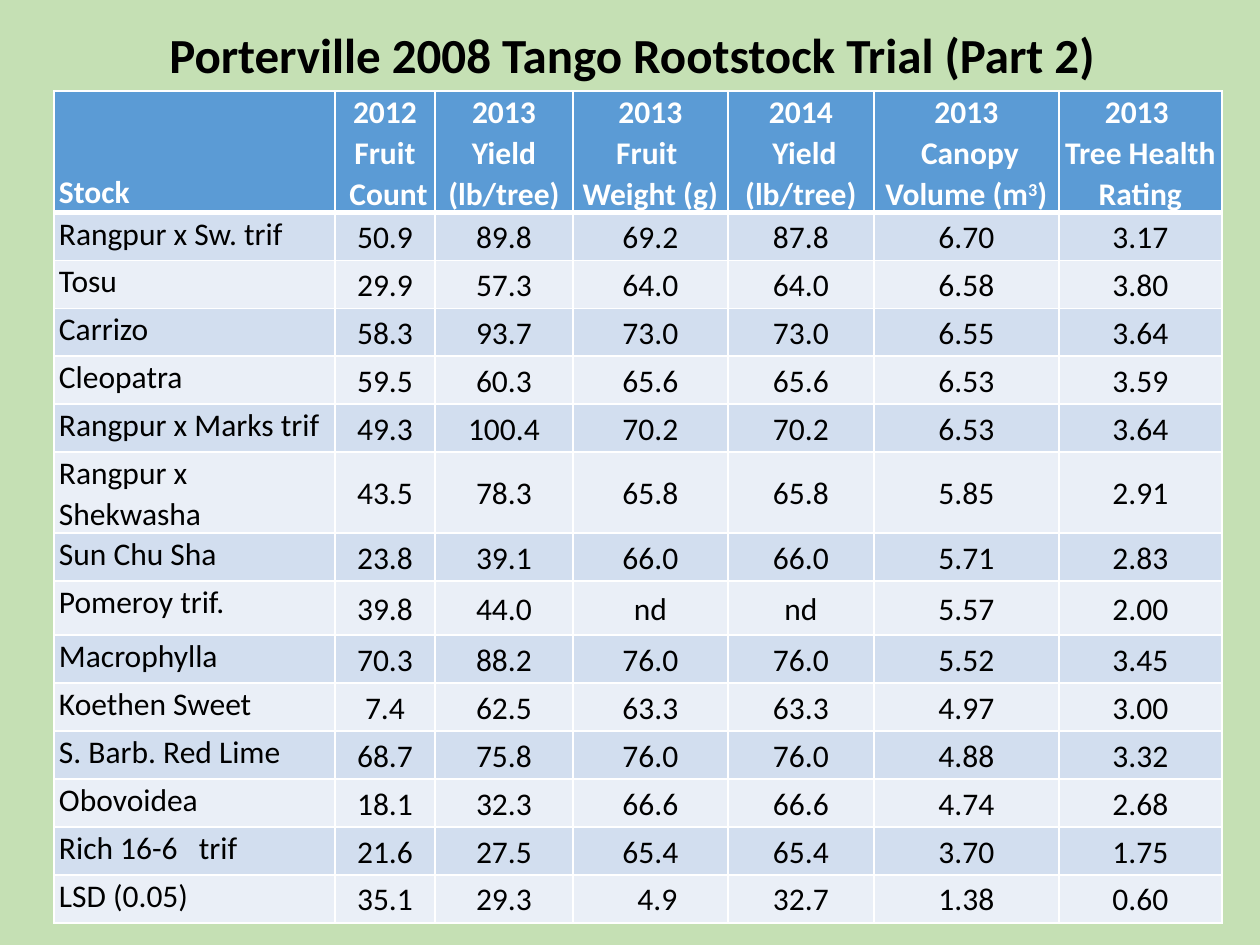
from lxml import etree
from pptx import Presentation
from pptx import util as u
from pptx.dml.color import RGBColor
from pptx.enum import text
from pptx.oxml.ns import qn

PX = u.Inches(1) / 126
FONT = "Calibri"
COLORS = {
    "page": "C5E0B4", "ink": "000000", "white": "FFFFFF",
    "header": "5B9BD5", "odd_row": "D2DEEF", "even_row": "EAEFF7",
}
COLUMN_WIDTHS = [281, 100, 138, 155, 146, 185, 163]
HEADER_HEIGHT, ROW_HEIGHT = 120, 48
TALL_ROWS = {"Rangpur x Shekwasha": 79, "Pomeroy trif.": 54}
UNPADDED_COLUMNS = (3, 4)
SPACED_HEADERS = (0, 6)

# \n starts a paragraph, \v breaks a line, ^ surrounds a superscript
HEADERS = [
    "Stock",
    "2012\nFruit\n Count",
    "2013\v Yield \n(lb/tree)",
    "2013\nFruit \vWeight (g)",
    "2014\v Yield (lb/tree)",
    "2013\v Canopy Volume (m^3^)",
    "2013 \vTree Health Rating",
]
STOCKS = [
    ("Rangpur x Sw. trif", "50.9", "89.8", "69.2", "87.8", "6.70", "3.17"),
    ("Tosu", "29.9", "57.3", "64.0", "64.0", "6.58", "3.80"),
    ("Carrizo", "58.3", "93.7", "73.0", "73.0", "6.55", "3.64"),
    ("Cleopatra", "59.5", "60.3", "65.6", "65.6", "6.53", "3.59"),
    ("Rangpur x Marks trif", "49.3", "100.4", "70.2", "70.2", "6.53", "3.64"),
    ("Rangpur x Shekwasha", "43.5", "78.3", "65.8", "65.8", "5.85", "2.91"),
    ("Sun Chu Sha", "23.8", "39.1", "66.0", "66.0", "5.71", "2.83"),
    ("Pomeroy trif.", "39.8", "44.0", "nd", "nd", "5.57", "2.00"),
    ("Macrophylla", "70.3", "88.2", "76.0", "76.0", "5.52", "3.45"),
    ("Koethen Sweet", "7.4", "62.5", "63.3", "63.3", "4.97", "3.00"),
    ("S. Barb. Red Lime", "68.7", "75.8", "76.0", "76.0", "4.88", "3.32"),
    ("Obovoidea", "18.1", "32.3", "66.6", "66.6", "4.74", "2.68"),
    ("Rich 16-6   trif", "21.6", "27.5", "65.4", "65.4", "3.70", "1.75"),
    ("LSD (0.05)", "35.1", "29.3", "4.9", "32.7", "1.38", "0.60"),
]


def px(length):
    return u.Emu(round(length * PX))


def rgb(name):
    return RGBColor.from_string(COLORS[name])


def write_paragraph(para, line, size, color, bold, centered, leading, gap=0):
    """Fill a paragraph; every second piece between ^ marks is superscript."""
    first, *rest = line.split("^")
    para.text = first
    for index, piece in enumerate(rest):
        span = para.add_run()
        span.text = piece
        if index % 2 == 0:
            span._r.get_or_add_rPr().set("baseline", "30000")
    para.alignment = text.PP_ALIGN.CENTER if centered else text.PP_ALIGN.LEFT
    para.line_spacing = leading
    para.space_before = para.space_after = u.Pt(gap)
    para.font.name, para.font.size, para.font.bold = FONT, u.Pt(size), bold
    para.font.color.rgb = rgb(color)


def add_title(page, title):
    box = page.shapes.add_textbox(px(89), px(23), px(1086), px(69))
    frame = box.text_frame
    frame.word_wrap = True
    frame.vertical_anchor = text.MSO_ANCHOR.MIDDLE
    write_paragraph(frame.paragraphs[0], title, 28, "ink", True, True, 0.9)


def set_borders(cell, **points):
    """Draw white borders; the keys are L, R, T and B."""
    properties = cell._tc.get_or_add_tcPr()
    for side, width in points.items():
        line = etree.SubElement(properties, qn(f"a:ln{side}"), w=str(u.Pt(width)))
        fill = etree.SubElement(line, qn("a:solidFill"))
        etree.SubElement(fill, qn("a:srgbClr"), val=COLORS["white"])


def fill_cell(cell, content, row, column):
    is_header = row == 0
    set_borders(cell, L=1, R=1, T=3 if row == 1 else 1, B=3 if is_header else 1)
    cell.fill.solid()
    cell.fill.fore_color.rgb = rgb(
        "header" if is_header else "odd_row" if row % 2 else "even_row")
    cell.margin_top = cell.margin_bottom = 0
    cell.margin_left = cell.margin_right = px(0 if column in UNPADDED_COLUMNS else 5)
    if is_header:
        cell.vertical_anchor = text.MSO_ANCHOR.BOTTOM
    else:
        cell.vertical_anchor = text.MSO_ANCHOR.MIDDLE if column else text.MSO_ANCHOR.TOP
    gap = 0 if is_header and column not in SPACED_HEADERS else 3
    frame = cell.text_frame
    for index, line in enumerate(content.split("\n")):
        para = frame.add_paragraph() if index else frame.paragraphs[0]
        write_paragraph(para, line, 18, "white" if is_header else "ink",
                        is_header, column > 0, 1.07, gap)


def add_trial_table(page):
    heights = [HEADER_HEIGHT] + [TALL_ROWS.get(stock[0], ROW_HEIGHT) for stock in STOCKS]
    table = page.shapes.add_table(
        len(heights), len(COLUMN_WIDTHS), px(54), px(91),
        px(sum(COLUMN_WIDTHS)), px(sum(heights))).table
    for column, width in zip(table.columns, COLUMN_WIDTHS):
        column.width = px(width)
    for row, height in zip(table.rows, heights):
        row.height = px(height)
    for row, contents in enumerate([HEADERS, *STOCKS]):
        for column, content in enumerate(contents):
            fill_cell(table.cell(row, column), content, row, column)
    # Line up the decimal point of the one-digit weight with those above
    table.cell(len(STOCKS), 3).margin_left = px(14)


def main():
    deck = Presentation()
    deck.slide_width, deck.slide_height = px(1260), px(945)
    page = deck.slides.add_slide(deck.slide_layouts[6])
    page.background.fill.solid()
    page.background.fill.fore_color.rgb = rgb("page")
    add_title(page, "Porterville 2008 Tango Rootstock Trial (Part 2)")
    add_trial_table(page)
    deck.save("out.pptx")


if __name__ == "__main__":
    main()
